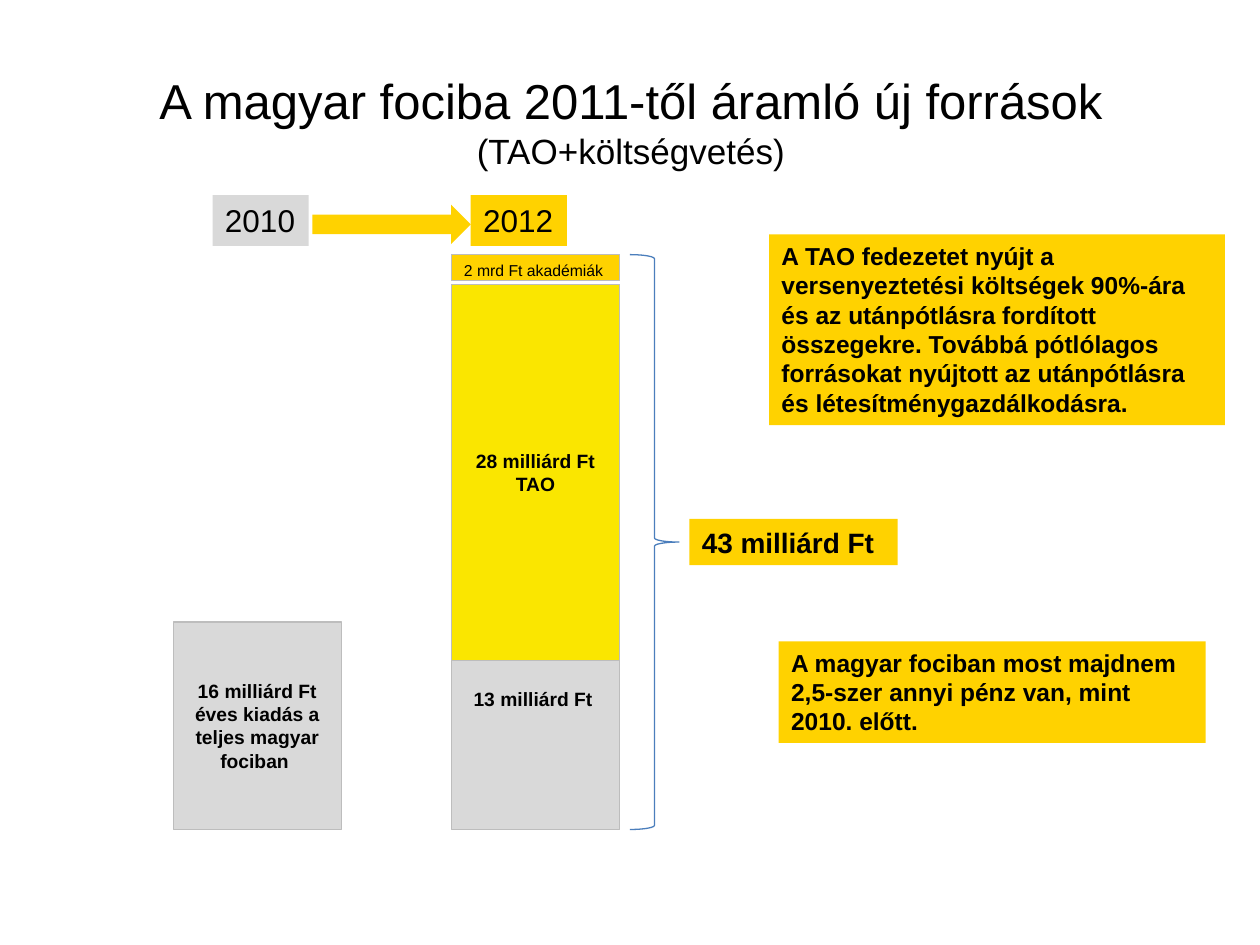
from pptx import Presentation
from pptx.dml.color import RGBColor
from pptx.enum.shapes import MSO_SHAPE
from pptx.enum.text import MSO_ANCHOR, PP_ALIGN
from pptx.util import Pt

COLORS = {
    "gold": "FFD200",
    "yellow": "FAE600",
    "gray": "D9D9D9",
    "border": "BDBDBD",
    "brace": "4B7EBC",
    "text": "000000",
}
YEAR = {"size": Pt(18)}
BAR = {"size": Pt(11), "bold": True}
SMALL = {"size": Pt(9)}
TOTAL = {"size": Pt(16), "bold": True}
NOTE = {"size": Pt(14), "bold": True}


def color(name):
    return RGBColor.from_string(COLORS[name])


def format_font(font, values):
    for name, value in {"name": "Arial", **values}.items():
        setattr(font, name, value)
    font.color.rgb = color("text")


def write(shape, text, values, centered=False):
    frame = shape.text_frame
    frame.word_wrap = True
    frame.vertical_anchor = MSO_ANCHOR.MIDDLE if centered else MSO_ANCHOR.TOP
    paragraph = frame.paragraphs[0]
    paragraph.alignment = PP_ALIGN.CENTER if centered else PP_ALIGN.LEFT
    run = paragraph.add_run()
    run.text = text
    format_font(run.font, values)


def add_shape(slide, box, fill=None, line=None, kind=MSO_SHAPE.RECTANGLE):
    """Add a flat preset shape; box is left, top, width, height in points."""
    shape = slide.shapes.add_shape(kind, *map(Pt, box))
    shape.shadow.inherit = False
    if fill:
        shape.fill.solid()
        shape.fill.fore_color.rgb = color(fill)
    else:
        shape.fill.background()
    if line:
        shape.line.color.rgb = color(line)
        shape.line.width = Pt(0.75)
    else:
        shape.line.fill.background()
    return shape


def add_label(slide, box, text, values, fill="gold"):
    write(add_shape(slide, box, fill), text, values)


def add_title(slide, box):
    title = slide.shapes.title
    for name, value in zip(("left", "top", "width", "height"), box):
        setattr(title, name, Pt(value))
    write(title, "A magyar fociba 2011-től áramló új források ", {"size": Pt(28)}, centered=True)
    subtitle = title.text_frame.paragraphs[0].add_run()
    subtitle.text = "(TAO+költségvetés)"
    format_font(subtitle.font, {"size": Pt(20)})


def add_years(slide, box):
    """Place the two year labels at the ends of the box, with an arrow between."""
    left, top, width, height = box
    label_width = 55
    end = left + width - label_width
    add_label(slide, (end, top, label_width, height), "2012", YEAR)
    add_label(slide, (left, top, label_width, height), "2010", YEAR, "gray")
    start = left + label_width + 2
    add_shape(slide, (start, top + 5.5, end - start, 22.5), "gold", kind=MSO_SHAPE.RIGHT_ARROW)


def add_bars(slide, box):
    """Place the 2010 bar at the left and the stacked 2012 bar at the right of the box."""
    left, top, width, height = box
    bar_width = 96
    stack = left + width - bar_width
    bottom = top + height

    def add_bar(bar_left, bar_top, bar_height, fill):
        return add_shape(slide, (bar_left, bar_top, bar_width, bar_height), fill, "border")

    before = add_bar(left, bottom - 118.5, 118.5, "gray")
    write(before, "16 milliárd Ft éves kiadás a teljes magyar fociban ", BAR, centered=True)
    add_bar(stack, bottom - 152.5, 152.5, "gray")
    tax = add_bar(stack, top + 17, 215, "yellow")
    write(tax, "28 milliárd Ft TAO", BAR, centered=True)
    academies = add_bar(stack, top, 15, "gold")
    write(academies, "2 mrd Ft akadémiák", SMALL)
    base = slide.shapes.add_textbox(Pt(stack + 5.5), Pt(bottom - 85), Pt(85), Pt(21))
    write(base, "13 milliárd Ft", BAR)


def add_total(slide, box):
    """Place the brace at the left of the box and the total beside its point."""
    left, top, width, height = box
    brace_width, label_width, label_height = 28, 119, 26.5
    add_shape(slide, (left, top, brace_width, height), line="brace", kind=MSO_SHAPE.RIGHT_BRACE)
    label_top = top + (height - label_height) / 2
    label_left = left + width - label_width
    add_label(slide, (label_left, label_top, label_width, label_height), "43 milliárd Ft", TOTAL)


def main():
    presentation = Presentation()
    presentation.slide_width, presentation.slide_height = Pt(720), Pt(540)
    slide = presentation.slides.add_slide(presentation.slide_layouts[5])

    add_title(slide, (36.5, 37.5, 648, 63.5))
    add_years(slide, (121.5, 111.5, 202.5, 29))
    add_bars(slide, (99, 145.5, 255, 328.5))
    add_total(slide, (360, 145.5, 153, 328.5))
    add_label(
        slide,
        (439.5, 134, 260.5, 109),
        "A TAO fedezetet nyújt a versenyeztetési költségek 90%-ára és az "
        "utánpótlásra fordított összegekre. Továbbá pótlólagos forrásokat "
        "nyújtott az utánpótlásra és létesítménygazdálkodásra.",
        NOTE,
    )
    add_label(
        slide,
        (445, 366.5, 244, 58),
        "A magyar fociban most majdnem 2,5-szer annyi pénz van, mint 2010. előtt.",
        NOTE,
    )
    presentation.save("out.pptx")


if __name__ == "__main__":
    main()
